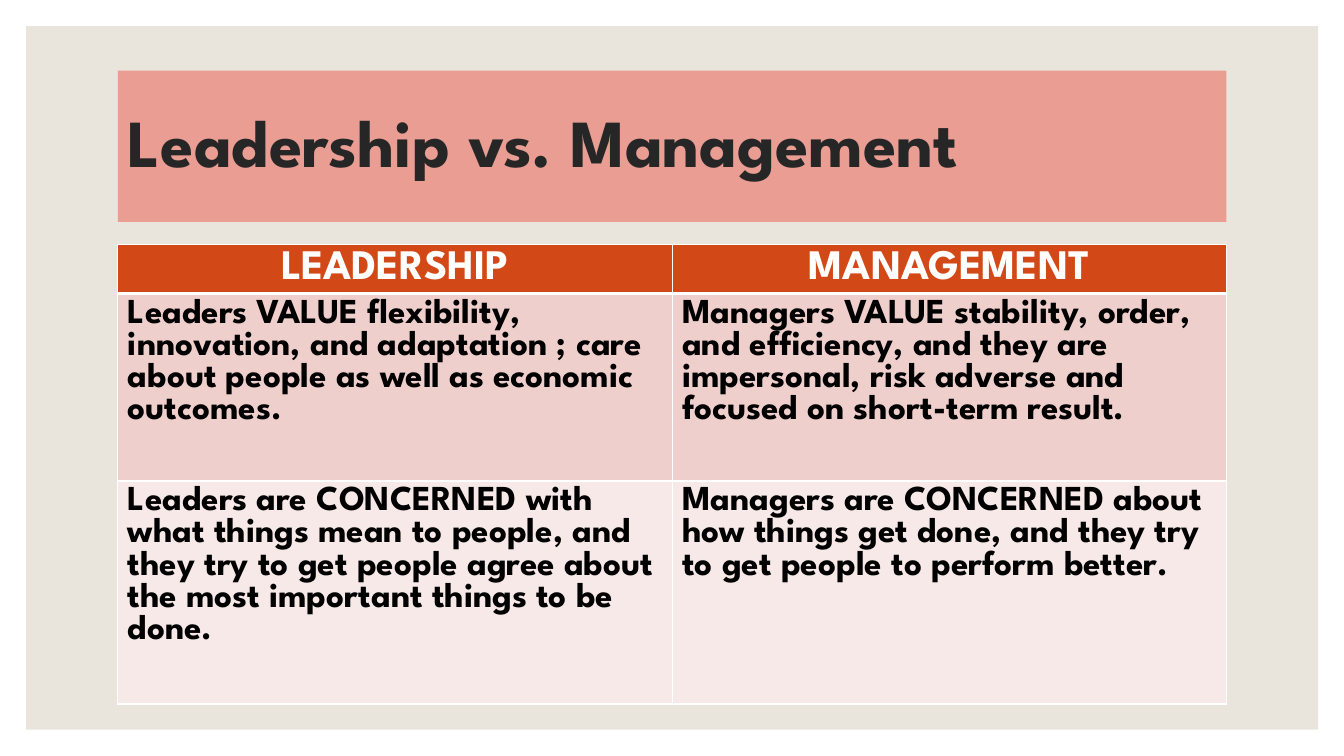
from lxml import etree
from pptx import Presentation
from pptx.dml.color import RGBColor
from pptx.enum import shapes, text
from pptx.oxml.ns import qn
from pptx.util import Cm, Pt

FONT = "League Spartan"
LEFT, WIDTH = 2.97, 27.94
ROW_HEIGHTS = (1.2, 4.72, 5.62)
ROW_FILLS = ("D34817", "EFCFCC", "F7E9E8")
COMPARISON = (
    ("LEADERSHIP", "MANAGEMENT"),
    (
        "Leaders VALUE flexibility, innovation, and adaptation ; care about "
        "people as well as economic outcomes.",
        "Managers VALUE stability, order, and efficiency, and they are "
        "impersonal, risk adverse and focused on short-term result.",
    ),
    (
        "Leaders are CONCERNED with what things mean to people, and they try "
        "to get people agree about the most important things to be done.",
        "Managers are CONCERNED about how things get done, and they try to "
        "get people to perform better.",
    ),
)


def paint(fill, color):
    fill.solid()
    fill.fore_color.rgb = RGBColor.from_string(color)


def write(frame, wording, size, color, align=text.PP_ALIGN.LEFT):
    frame.word_wrap = True
    paragraph = frame.paragraphs[0]
    paragraph.text = wording
    paragraph.alignment = align
    font = paragraph.font
    font.name, font.size, font.bold = FONT, Pt(size), True
    font.color.rgb = RGBColor.from_string(color)
    return paragraph


def add_panel(slide, left, top, width, height, color):
    panel = slide.shapes.add_shape(
        shapes.MSO_SHAPE.RECTANGLE, Cm(left), Cm(top), Cm(width), Cm(height))
    panel.shadow.inherit = False
    paint(panel.fill, color)
    panel.line.fill.background()
    return panel


def add_title(slide, wording):
    banner = add_panel(slide, LEFT, 1.78, WIDTH, 3.81, "E99D93")
    banner.text_frame.vertical_anchor = text.MSO_ANCHOR.MIDDLE
    write(banner.text_frame, wording, 48, "262626").line_spacing = 0.9


def set_borders(cell, bottom):
    """Draw white borders, 1 pt wide except for the bottom one."""
    properties = cell._tc.get_or_add_tcPr()
    widths = {"a:lnL": 1, "a:lnR": 1, "a:lnT": 1, "a:lnB": bottom}
    # Borders must come before the fill in the cell properties.
    for position, (side, width) in enumerate(widths.items()):
        line = etree.Element(qn(side), w=str(Pt(width)))
        solid = etree.SubElement(line, qn("a:solidFill"))
        etree.SubElement(solid, qn("a:srgbClr"), val="FFFFFF")
        properties.insert(position, line)


def add_comparison(slide):
    table = slide.shapes.add_table(
        len(COMPARISON), 2, Cm(LEFT), Cm(6.17), Cm(WIDTH),
        Cm(sum(ROW_HEIGHTS))).table
    for r, wordings in enumerate(COMPARISON):
        table.rows[r].height = Cm(ROW_HEIGHTS[r])
        for c, wording in enumerate(wordings):
            cell = table.cell(r, c)
            paint(cell.fill, ROW_FILLS[r])
            if r == 0:
                write(cell.text_frame, wording, 30, "FFFFFF",
                      text.PP_ALIGN.CENTER)
            else:
                write(cell.text_frame, wording, 25, "000000")
            set_borders(cell, bottom=3 if r == 0 else 1)
            if r == 1:
                top = cell._tc.tcPr.find(qn("a:lnT"))
                top.set("w", str(Pt(3)))


def main():
    deck = Presentation()
    deck.slide_width, deck.slide_height = Cm(33.87), Cm(19.05)
    slide = deck.slides.add_slide(deck.slide_layouts[6])
    paint(slide.background.fill, "FFFFFF")
    add_panel(slide, 0.66, 0.66, 32.56, 17.73, "E9E5DC")
    add_title(slide, "Leadership vs. Management")
    add_comparison(slide)
    deck.save("out.pptx")


if __name__ == "__main__":
    main()
